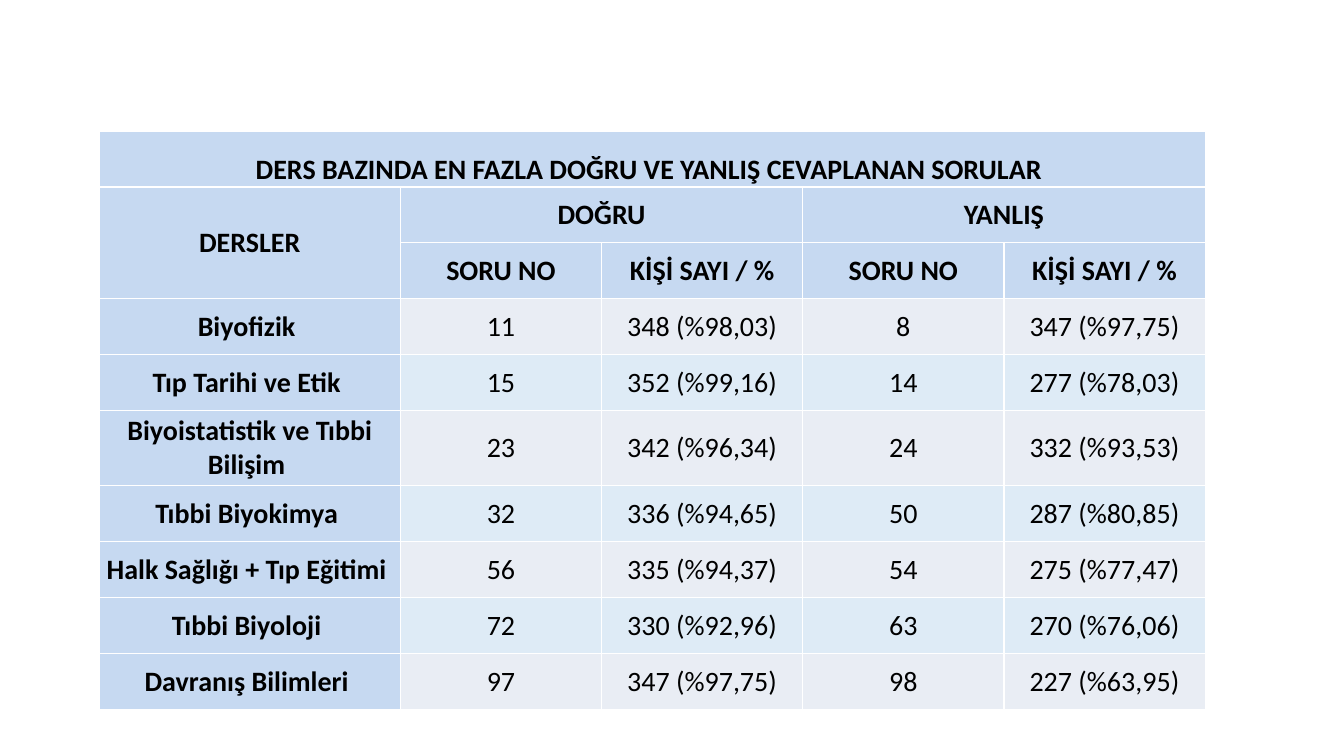
from dataclasses import dataclass

from lxml import etree
from pptx import Presentation
from pptx.dml.color import RGBColor
from pptx.enum.text import MSO_ANCHOR, PP_ALIGN
from pptx.oxml.ns import qn
from pptx.table import Table, _Cell
from pptx.util import Cm, Pt

MIDDLE, BOTTOM = MSO_ANCHOR.MIDDLE, MSO_ANCHOR.BOTTOM
CENTER = PP_ALIGN.CENTER

COLORS = {
    "header": "C6D9F1",
    "odd": "E9EDF4",
    "even": "DEEBF6",
    "border": "FFFFFF",
    "text": "000000",
}
FONT = "Calibri"
FONT_SIZE = Pt(20)
COLUMN_WIDTHS = [7.59] + [5.07] * 4
ROW_HEIGHT, TALL_ROW_HEIGHT = 1.41, 1.89
HEADER_ROWS = 3


@dataclass(frozen=True)
class Heading:
    """A header text with the cells that it spans."""

    text: str
    row: int
    column: int
    rows: int = 1
    columns: int = 1
    anchor: MSO_ANCHOR = MIDDLE


@dataclass(frozen=True)
class Course:
    """A course with its most often right and wrong questions."""

    name: str
    right_question: str
    right_people: str
    wrong_question: str
    wrong_people: str
    height: float = ROW_HEIGHT

    def texts(self) -> list[str]:
        """Return the row's texts from left to right."""
        return [self.name, self.right_question, self.right_people,
                self.wrong_question, self.wrong_people]


HEADINGS = [
    Heading("DERS BAZINDA EN FAZLA DOĞRU VE YANLIŞ CEVAPLANAN SORULAR ",
            0, 0, columns=5, anchor=BOTTOM),
    Heading("DERSLER", 1, 0, rows=2),
    Heading("DOĞRU", 1, 1, columns=2),
    Heading("YANLIŞ", 1, 3, columns=2),
    Heading("SORU NO", 2, 1),
    Heading("KİŞİ SAYI / %", 2, 2),
    Heading("SORU NO", 2, 3),
    Heading("KİŞİ SAYI / %", 2, 4),
]
COURSES = [
    Course("Biyofizik ", "11", "348 (%98,03)", "8", "347 (%97,75)"),
    Course("Tıp Tarihi ve Etik ", "15", "352 (%99,16)", "14", "277 (%78,03)"),
    Course("Biyoistatistik ve Tıbbi Bilişim ", "23", "342 (%96,34)", "24", "332 (%93,53)",
           TALL_ROW_HEIGHT),
    Course("Tıbbi Biyokimya ", "32", "336 (%94,65)", "50", "287 (%80,85)"),
    Course("Halk Sağlığı + Tıp Eğitimi ", "56", "335 (%94,37)", "54", "275 (%77,47)"),
    Course("Tıbbi Biyoloji ", "72", "330 (%92,96)", "63", "270 (%76,06)"),
    Course("Davranış Bilimleri ", "97", "347 (%97,75)", "98", "227 (%63,95)"),
]


def style_cell(cell: _Cell, fill: str) -> None:
    """Give a cell its fill, zero margins and thin borders."""
    cell.margin_left = cell.margin_right = cell.margin_top = cell.margin_bottom = 0
    cell.vertical_anchor = MIDDLE
    properties = cell._tc.get_or_add_tcPr()
    for side in ("a:lnL", "a:lnR", "a:lnT", "a:lnB"):
        line = etree.SubElement(properties, qn(side), w=str(Pt(1)))
        solid = etree.SubElement(line, qn("a:solidFill"))
        etree.SubElement(solid, qn("a:srgbClr"), val=COLORS["border"])
    cell.fill.solid()
    cell.fill.fore_color.rgb = RGBColor.from_string(COLORS[fill])


def write_cell(cell: _Cell, text: str, bold: bool) -> None:
    """Write centred text into a cell."""
    cell.text_frame.text = text
    paragraph = cell.text_frame.paragraphs[0]
    paragraph.alignment = CENTER
    font = paragraph.runs[0].font
    font.name, font.size, font.bold = FONT, FONT_SIZE, bold
    font.color.rgb = RGBColor.from_string(COLORS["text"])


def write_headings(table: Table) -> None:
    """Fill and merge the header cells."""
    for row in range(HEADER_ROWS):
        for column in range(len(COLUMN_WIDTHS)):
            style_cell(table.cell(row, column), "header")
    for heading in HEADINGS:
        cell = table.cell(heading.row, heading.column)
        if heading.rows * heading.columns > 1:
            cell.merge(table.cell(heading.row + heading.rows - 1,
                                  heading.column + heading.columns - 1))
        cell.vertical_anchor = heading.anchor
        write_cell(cell, heading.text, True)


def write_courses(table: Table) -> None:
    """Fill one banded row for each course."""
    for index, course in enumerate(COURSES):
        band = "even" if index % 2 else "odd"
        for column, text in enumerate(course.texts()):
            cell = table.cell(HEADER_ROWS + index, column)
            is_name = column == 0
            style_cell(cell, "header" if is_name else band)
            write_cell(cell, text, is_name)


def main() -> None:
    """Build the slide with the question table."""
    presentation = Presentation()
    presentation.slide_width, presentation.slide_height = Cm(33.87), Cm(19.05)
    slide = presentation.slides.add_slide(presentation.slide_layouts[6])
    row_heights = [ROW_HEIGHT] * HEADER_ROWS + [course.height for course in COURSES]
    table = slide.shapes.add_table(
        len(row_heights), len(COLUMN_WIDTHS), Cm(2.5), Cm(3.3),
        Cm(sum(COLUMN_WIDTHS)), Cm(sum(row_heights))).table
    table.first_row = table.horz_banding = False
    for column, width in zip(table.columns, COLUMN_WIDTHS):
        column.width = Cm(width)
    for row, height in zip(table.rows, row_heights):
        row.height = Cm(height)
    write_headings(table)
    write_courses(table)
    presentation.save("out.pptx")


if __name__ == "__main__":
    main()
